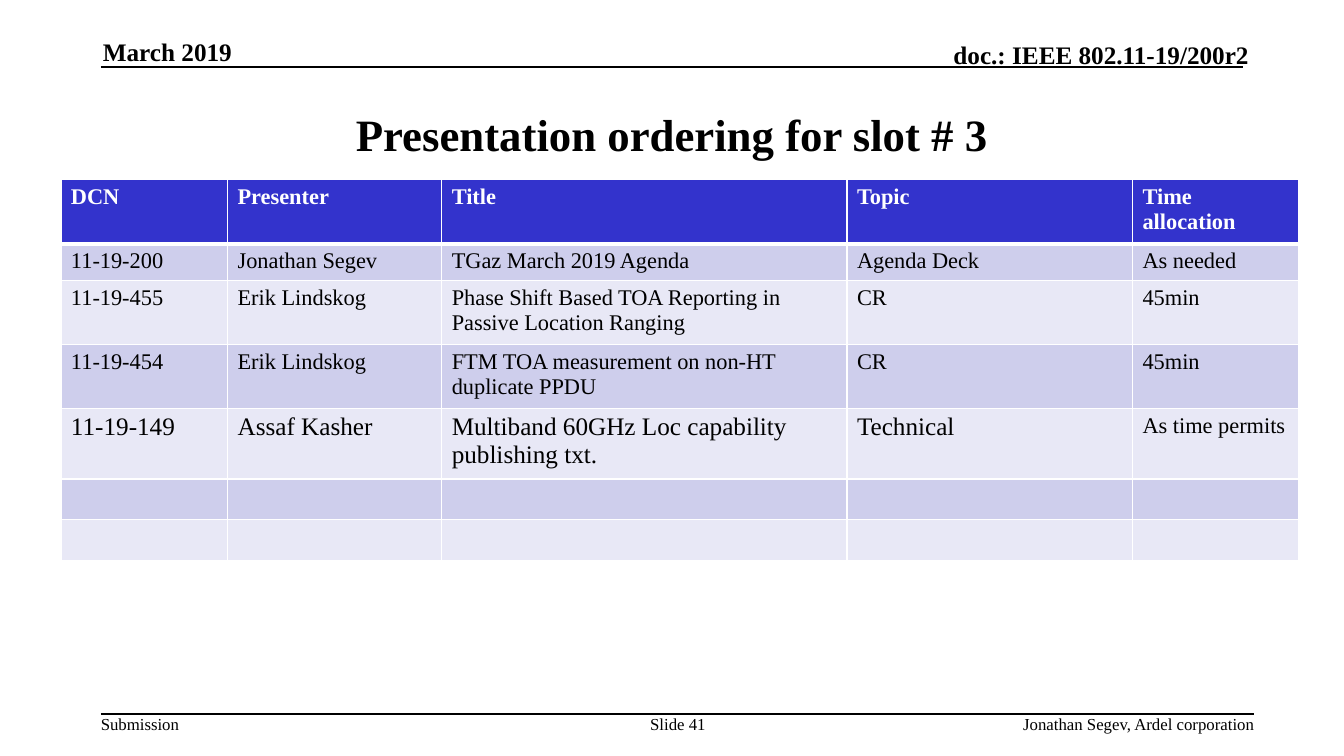
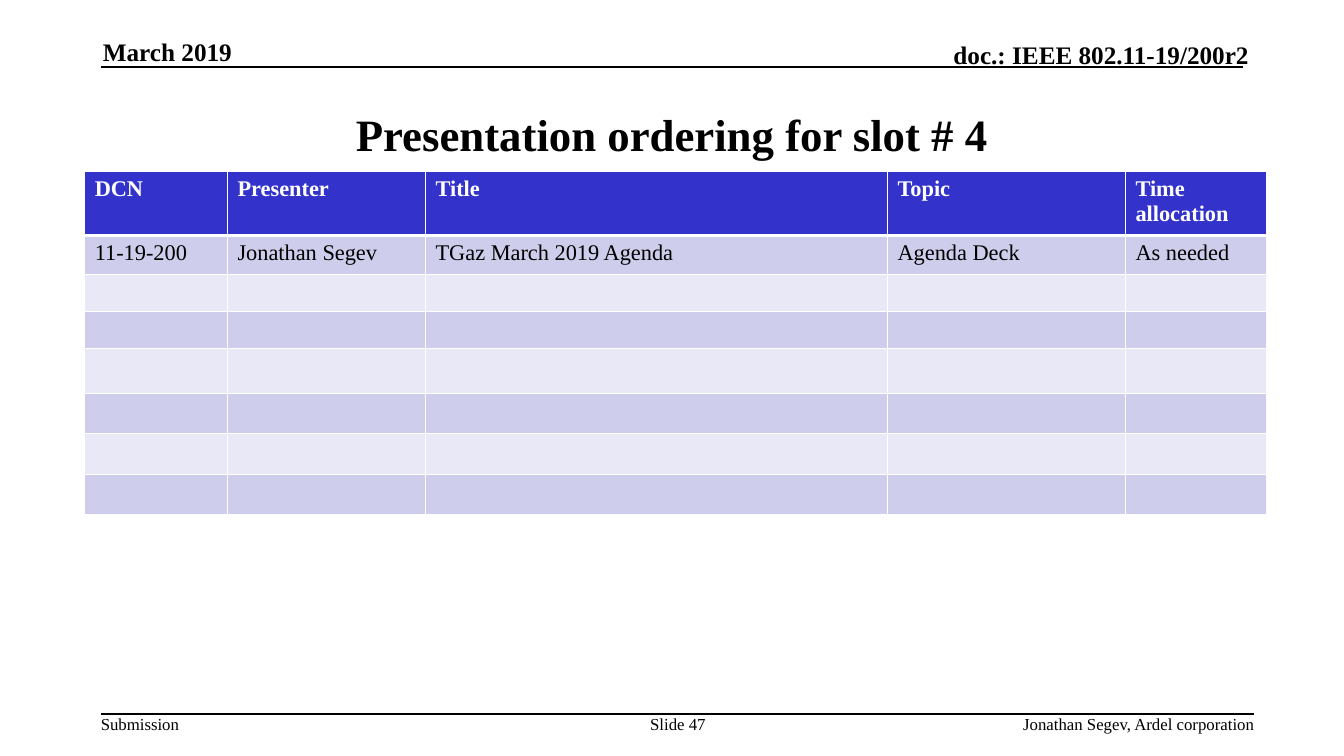
from lxml import etree
from pptx import Presentation
from pptx.dml.color import RGBColor
from pptx.enum import shapes, text
from pptx.oxml.ns import qn
from pptx.util import Pt

FONT = "Times New Roman"
COLORS = {
    "text": "000000",
    "white": "FFFFFF",
    "header": "3333CC",
    "band_dark": "CECEEC",
    "band_light": "E8E8F6",
}
ALIGN = text.PP_ALIGN
ANCHOR = text.MSO_ANCHOR
HEADINGS = ["DCN", "Presenter", "Title", "Topic", "Time allocation"]
AGENDA = ["11-19-200", "Jonathan Segev", "TGaz March 2019 Agenda", "Agenda Deck", "As needed"]
BLANK = [""] * len(HEADINGS)
CELL_SIZE = 16

# Each row: height, text size, cell texts
SLOTS = [
    {
        "slot": 3, "number": 41, "origin": (43.5, 128.5),
        "columns": [119, 153, 289.5, 204, 118.5],
        "rows": [
            (42.5, 16, HEADINGS),
            (25, 16, AGENDA),
            (42.5, 16, ["11-19-455", "Erik Lindskog",
                        "Phase Shift Based TOA Reporting in Passive Location Ranging",
                        "CR", "45min"]),
            (42.5, 16, ["11-19-454", "Erik Lindskog",
                        "FTM TOA measurement on non-HT duplicate PPDU",
                        "CR", "45min"]),
            (47, 18, ["11-19-149", "Assaf Kasher",
                      "Multiband 60GHz Loc capability publishing txt.",
                      "Technical", "As time permits"]),
            (29, 16, BLANK),
            (29, 16, BLANK),
        ],
    },
    {
        "slot": 4, "number": 47, "origin": (60.5, 122.5),
        "columns": [102, 141.5, 330, 170, 101],
        "rows": [(42.5, 16, HEADINGS), (28, 16, AGENDA)]
        + [(height, 16, BLANK) for height in (25, 25, 32, 29, 29, 29)],
    },
]


def rgb(name):
    return RGBColor.from_string(COLORS[name])


def style(p, size, bold=False, color="text", align=ALIGN.LEFT):
    p.alignment = align
    p.font.name = FONT
    p.font.size = Pt(size)
    p.font.bold = bold
    p.font.color.rgb = rgb(color)


def add_label(slide, box, words, size, bold=False, align=ALIGN.LEFT, anchor=ANCHOR.TOP):
    tf = slide.shapes.add_textbox(*map(Pt, box)).text_frame
    tf.margin_left = tf.margin_top = tf.margin_right = tf.margin_bottom = 0
    tf.word_wrap = True
    tf.vertical_anchor = anchor
    tf.text = words
    style(tf.paragraphs[0], size, bold, align=align)


def add_rule(slide, left, right, y):
    line = slide.shapes.add_connector(
        shapes.MSO_CONNECTOR.STRAIGHT, Pt(left), Pt(y), Pt(right), Pt(y))
    line.line.color.rgb = rgb("text")
    line.line.width = Pt(1)
    etree.SubElement(line._element.spPr, qn("a:effectLst"))


def add_header(slide, left=72, top=26):
    add_rule(slide, left, left + 816, top + 22)
    add_label(slide, (left + 1.5, top, 196, 21.5), "March 2019", 18, True,
              anchor=ANCHOR.BOTTOM)
    add_label(slide, (left + 453, top + 2, 367, 21.5), "doc.: IEEE 802.11-19/200r2",
              18, True, ALIGN.RIGHT, ANCHOR.BOTTOM)


def add_footer(slide, number, left=72, top=510):
    add_rule(slide, left, left + 824, top)
    add_label(slide, (left, top, 80, 14.5), "Submission", 12)
    add_label(slide, (left + 384.5, top, 55.5, 29), f"Slide {number}", 12, align=ALIGN.CENTER)
    add_label(slide, (left + 490, top, 334, 14.5), "Jonathan Segev, Ardel corporation",
              12, align=ALIGN.RIGHT)


def set_title(slide, words):
    title = slide.shapes.title
    title.left, title.top, title.width, title.height = map(Pt, (72, 54, 816, 83.5))
    tf = title.text_frame
    tf.auto_size = text.MSO_AUTO_SIZE.NONE
    tf.vertical_anchor = ANCHOR.MIDDLE
    tf.text = words
    style(tf.paragraphs[0], 32, True, align=ALIGN.CENTER)


def set_borders(cell, **widths):
    """Draw white borders; widths are in points, keyed by side L, R, T, B."""
    tc_pr = cell._tc.get_or_add_tcPr()
    for side in "LRTB":
        ln = etree.SubElement(tc_pr, qn(f"a:ln{side}"), w=str(Pt(widths.get(side, 1))))
        fill = etree.SubElement(ln, qn("a:solidFill"))
        etree.SubElement(fill, qn("a:srgbClr"), val=COLORS["white"])


def add_schedule(slide, origin, columns, rows):
    heights = [height for height, _, _ in rows]
    box = (*origin, sum(columns), sum(heights))
    table = slide.shapes.add_table(len(rows), len(columns), *map(Pt, box)).table
    for column, width in zip(table.columns, columns):
        column.width = Pt(width)
    for i, (height, size, words) in enumerate(rows):
        table.rows[i].height = Pt(height)
        is_header = i == 0
        band = "header" if is_header else "band_dark" if i % 2 else "band_light"
        edges = {0: {"B": 3}, 1: {"T": 3}}.get(i, {})
        for j, word in enumerate(words):
            cell = table.cell(i, j)
            set_borders(cell, **edges)
            cell.fill.solid()
            cell.fill.fore_color.rgb = rgb(band)
            cell.text = word
            # Time allocations keep the base size
            cell_size = CELL_SIZE if j == len(columns) - 1 else size
            style(cell.text_frame.paragraphs[0], cell_size, is_header,
                  "white" if is_header else "text")


def add_slot_slide(prs, slot, number, origin, columns, rows):
    slide = prs.slides.add_slide(prs.slide_layouts.get_by_name("Title Only"))
    add_header(slide)
    set_title(slide, f"Presentation ordering for slot # {slot}")
    add_footer(slide, number)
    add_schedule(slide, origin, columns, rows)


def main():
    prs = Presentation()
    prs.slide_width, prs.slide_height = Pt(960), Pt(540)
    for slot in SLOTS:
        add_slot_slide(prs, **slot)
    prs.save("out.pptx")


if __name__ == "__main__":
    main()
